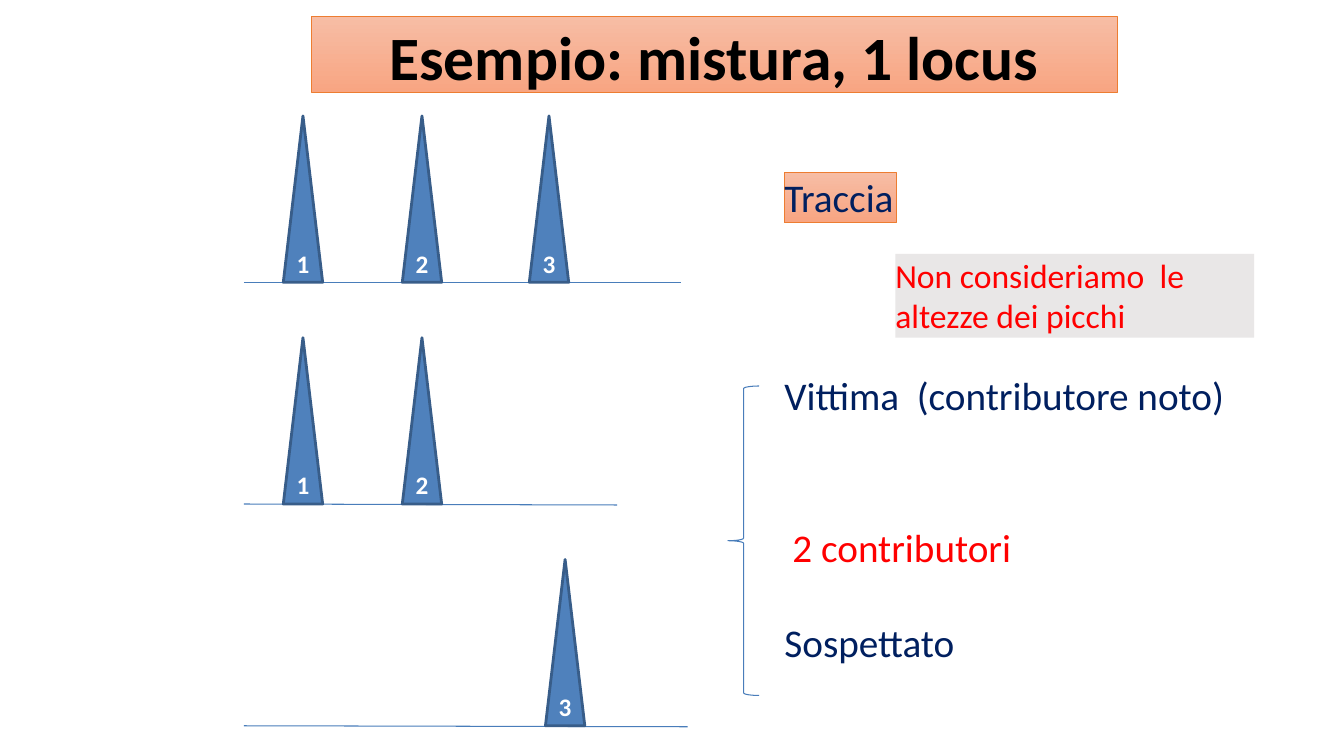
"""Builds the slide on a one-locus mixture with three rows of peaks."""
from lxml.etree import SubElement
from pptx import Presentation
from pptx.dml.color import RGBColor as Rgb
from pptx.enum.shapes import MSO_CONNECTOR as Link, MSO_SHAPE as Kind
from pptx.enum.text import MSO_ANCHOR as Anchor, PP_ALIGN as Align
from pptx.oxml.ns import qn
from pptx.util import Inches, Pt

HUES = {
    "black": "000000", "white": "FFFFFF", "navy": "001F5F", "red": "FF0000",
    "grey": "E9E7E7", "light": "F7BDA5", "dark": "F8A582", "orange": "ED7D31",
    "blue": "4F81BC", "edge": "385D89", "rule": "497DBA",
}
TITLE = ("Esempio: mistura, 1 locus", (3.09, 0.16, 7.99, 0.76))
TRACE = ("Traccia", (7.78, 1.71, 1.11, 0.5))
NOTE = ("Non consideriamo  le altezze dei picchi", (8.88, 2.52, 3.56, 0.83))
LABELS = [
    ("Vittima  (contributore noto)", (7.78, 3.67, 4.85, 0.49), "navy"),
    ("2 contributori", (7.86, 5.18, 3.22, 0.49), "red"),
    ("Sospettato", (7.78, 6.12, 3.3, 0.49), "navy"),
]
ROWS = [
    (6.75, 0, [("1", 2.81), ("2", 3.99), ("3", 5.25)]),
    (6.12, 0.01, [("1", 2.81), ("2", 3.99)]),
    (6.82, 0.01, [("3", 5.41)]),
]
BRACE = (7.22, 3.83, 0.31, 3.07)
LEFT, BASE, PITCH = 2.42, 2.8, 2.2
WIDE, TALL = 0.39, 1.65

deck = Presentation()
deck.slide_width, deck.slide_height = Inches(13.33), Inches(7.5)
slide = deck.slides.add_slide(deck.slide_layouts[5])
shapes = slide.shapes


def hue(name):
    return Rgb.from_string(HUES[name])


def place(shape, box):
    shape.left, shape.top, shape.width, shape.height = map(Inches, box)


def stroke(shape, name, width):
    shape.line.color.rgb = hue(name)
    shape.line.width = Pt(width)


def glow(shape):
    shape.fill.gradient()
    shape.fill.gradient_angle = 270
    for stop, name, pos in zip(shape.fill.gradient_stops, ("light", "dark"), (0, 1)):
        stop.color.rgb = hue(name)
        stop.position = pos
    stroke(shape, "orange", 0.5)


def draw(kind, box):
    shape = shapes.add_shape(kind, *map(Inches, box))
    shape.shadow.inherit = False
    return shape


def write(shape, text, size=28, color="navy", bold=False, align=Align.LEFT,
          anchor=Anchor.TOP, wrap=True, top=0.01, foot=0, before=1.1):
    frame = shape.text_frame
    frame.word_wrap = wrap
    frame.vertical_anchor = anchor
    frame.margin_left = frame.margin_right = 0
    frame.margin_top, frame.margin_bottom = Inches(top), Inches(foot)
    para = frame.paragraphs[0]
    para.alignment, para.space_before = align, Pt(before)
    run = para.add_run()
    run.text = text
    font = run.font
    font.name, font.size, font.bold = "Calibri", Pt(size), bold
    font.color.rgb = hue(color)


head = shapes.title
place(head, TITLE[1])
glow(head)
write(head, TITLE[0], size=44, color="black", bold=True, align=Align.CENTER,
      anchor=Anchor.MIDDLE, top=0.02)

trace = draw(Kind.RECTANGLE, TRACE[1])
glow(trace)
write(trace, TRACE[0], wrap=False)

note = draw(Kind.RECTANGLE, NOTE[1])
note.fill.solid()
note.fill.fore_color.rgb = hue("grey")
note.line.fill.background()
write(note, NOTE[0], size=24, color="red", before=0.8)

for row, (end, drop, peaks) in enumerate(ROWS):
    base = BASE + row * PITCH
    axis = shapes.add_connector(Link.STRAIGHT, *map(Inches, (LEFT, base, end, base + drop)))
    stroke(axis, "rule", 0.75)
    SubElement(axis.element.spPr, qn("a:effectLst"))
    for name, left in peaks:
        peak = draw(Kind.ISOSCELES_TRIANGLE, (left, base - TALL, WIDE, TALL))
        peak.fill.solid()
        peak.fill.fore_color.rgb = hue("blue")
        stroke(peak, "edge", 2)
        write(peak, name, size=18, color="white", bold=True, align=Align.CENTER,
              anchor=Anchor.BOTTOM, wrap=False, foot=0.04, before=0)

brace = draw(Kind.LEFT_BRACE, BRACE)
brace.fill.background()
stroke(brace, "rule", 0.75)

for text, box, color in LABELS:
    write(shapes.add_textbox(*map(Inches, box)), text, color=color)

deck.save("out.pptx")
